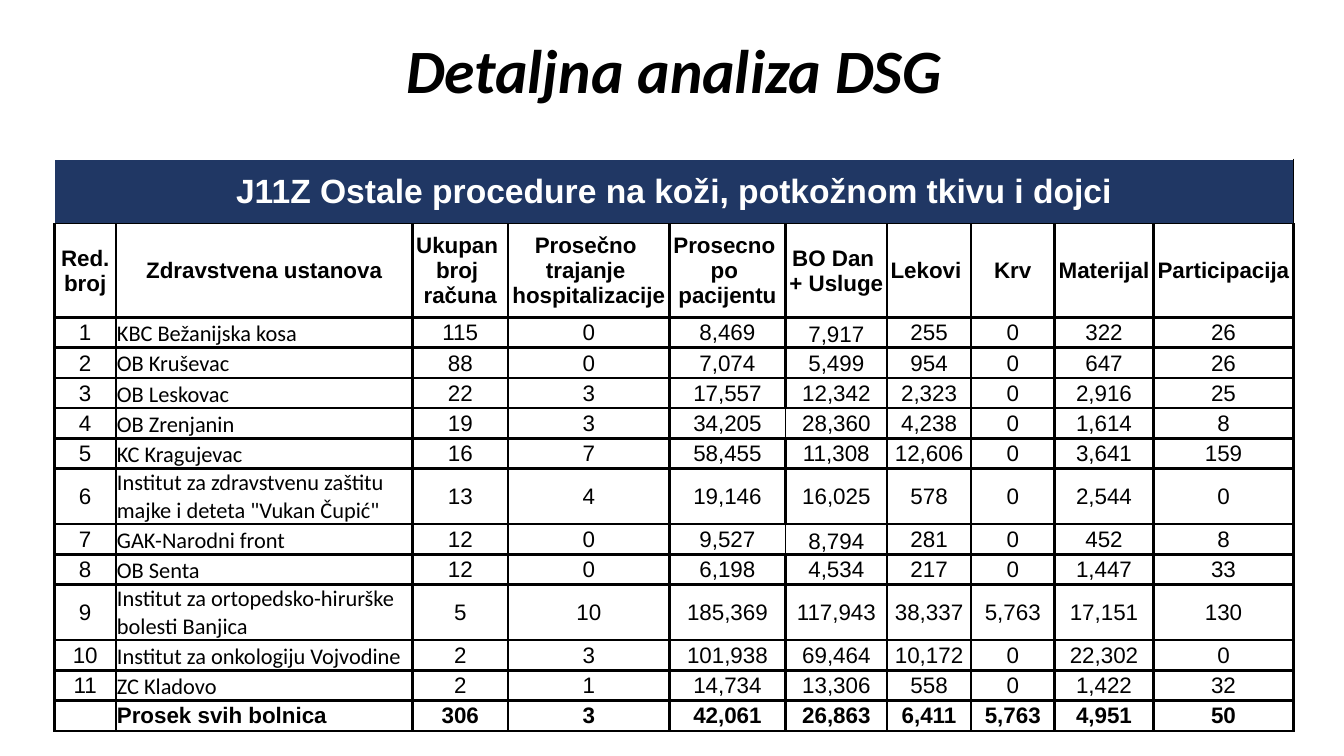
from dataclasses import dataclass

from lxml.etree import SubElement
from pptx import Presentation
from pptx.dml.color import RGBColor
from pptx.enum.text import MSO_ANCHOR, PP_ALIGN
from pptx.oxml.ns import qn
from pptx.util import Emu, Pt

PX = 9144

TITLE = "Detaljna analiza DSG"
GROUP = "J11Z Ostale procedure na koži, potkožnom tkivu i dojci"
HEADERS = (
    "Red. broj", "Zdravstvena ustanova", "Ukupan \nbroj \nračuna",
    "Prosečno \ntrajanje \nhospitalizacije", "Prosecno \npo \npacijentu",
    "BO Dan \n+ Usluge", "Lekovi ", "Krv", "Materijal", "Participacija",
)
HOSPITALS = (
    ("KBC Bežanijska kosa", "115 0 8,469 7,917 255 0 322 26"),
    ("OB Kruševac", "88 0 7,074 5,499 954 0 647 26"),
    ("OB Leskovac", "22 3 17,557 12,342 2,323 0 2,916 25"),
    ("OB Zrenjanin", "19 3 34,205 28,360 4,238 0 1,614 8"),
    ("KC Kragujevac", "16 7 58,455 11,308 12,606 0 3,641 159"),
    ('Institut za zdravstvenu zaštitu majke i deteta "Vukan Čupić"',
     "13 4 19,146 16,025 578 0 2,544 0"),
    ("GAK-Narodni front", "12 0 9,527 8,794 281 0 452 8"),
    ("OB Senta", "12 0 6,198 4,534 217 0 1,447 33"),
    ("Institut za ortopedsko-hirurške bolesti Banjica",
     "5 10 185,369 117,943 38,337 5,763 17,151 130"),
    ("Institut za onkologiju Vojvodine", "2 3 101,938 69,464 10,172 0 22,302 0"),
    ("ZC Kladovo", "2 1 14,734 13,306 558 0 1,422 32"),
)
AVERAGE = ("Prosek svih bolnica", "306 3 42,061 26,863 6,411 5,763 4,951 50")

COLUMNS = (61, 294, 95, 160, 115, 101, 83, 83, 98, 139)
NAME, PATIENT, CARE = 1, 4, 5
LOW_CARE = (1, 7)
THIN_CARE = (4, 7)
TALL = (6, 9)


@dataclass(frozen=True)
class Theme:
    ink: str = "000000"
    paper: str = "FFFFFF"
    navy: str = "203764"
    heading: str = "Calibri"
    body: str = "Arial"
    title_pt: int = 44
    group_pt: int = 24
    cell_pt: int = 16
    thick: float = 2
    thin: float = 0.5


class Deck:
    def __init__(self, theme):
        self.theme = theme
        self.prs = Presentation()
        self.prs.slide_width, self.prs.slide_height = Emu(1333 * PX), Emu(750 * PX)
        self.s = self.prs.slides.add_slide(self.prs.slide_layouts[6])

    def text(self, tf, text, size, font, color, bold=False, italic=False, align=PP_ALIGN.CENTER):
        tf.text = text
        for p in tf.paragraphs:
            p.alignment = align
            for r in p.runs:
                r.font.size, r.font.name = Pt(size), font
                r.font.bold, r.font.italic = bold, italic
                r.font.color.rgb = RGBColor.from_string(color)
            if not p.runs:
                SubElement(p._p, qn("a:endParaRPr"), sz=str(size * 100))

    def title(self, text, x, y, w, h):
        t = self.theme
        tf = self.s.shapes.add_textbox(*(Emu(v * PX) for v in (x, y, w, h))).text_frame
        tf.word_wrap = True
        tf.vertical_anchor = MSO_ANCHOR.MIDDLE
        self.text(tf, text, t.title_pt, t.heading, t.ink, True, True)
        tf.paragraphs[0].line_spacing = 0.9

    def table(self, x, y, columns, rows):
        size = (Emu(v * PX) for v in (x, y, sum(columns), sum(rows)))
        table = self.s.shapes.add_table(len(rows), len(columns), *size).table
        table.first_row = table.horz_banding = False
        for column, width in zip(table.columns, columns):
            column.width = Emu(width * PX)
        for row, height in zip(table.rows, rows):
            row.height = Emu(height * PX)
        return table

    def borders(self, cell, **widths):
        tcPr = cell._tc.get_or_add_tcPr()
        for side in "LRTB":
            if side in widths:
                ln = SubElement(tcPr, qn(f"a:ln{side}"), w=str(Pt(widths[side])))
                fill = SubElement(ln, qn("a:solidFill"))
                SubElement(fill, qn("a:srgbClr"), val=self.theme.ink)

    def cell(self, cell, text, edges, bold=False, font=None, align=PP_ALIGN.CENTER,
             anchor=MSO_ANCHOR.MIDDLE):
        t = self.theme
        self.borders(cell, **edges)
        cell.fill.background()
        self.frame(cell, anchor)
        self.text(cell.text_frame, text, t.cell_pt, font or t.body, t.ink, bold, align=align)

    def frame(self, cell, anchor):
        cell.margin_left = cell.margin_top = cell.margin_right = Emu(PX)
        cell.margin_bottom = 0
        cell.vertical_anchor = anchor

    def banner(self, table, text):
        t = self.theme
        first, last = table.cell(0, 0), table.cell(0, len(table.columns) - 1)
        first.merge(last)
        for cell in (first, last):
            self.borders(cell, R=t.thin, B=t.thin)
            cell.fill.solid()
            cell.fill.fore_color.rgb = RGBColor.from_string(t.navy)
        self.frame(first, MSO_ANCHOR.MIDDLE)
        self.text(first.text_frame, text, t.group_pt, t.body, t.paper, True)


def main():
    theme = Theme()
    deck = Deck(theme)
    deck.title(TITLE, 94, 0, 1150, 145)

    records = [HEADERS]
    records += [(str(i), name, *values.split()) for i, (name, values) in enumerate(HOSPITALS, 1)]
    records.append(("", AVERAGE[0], *AVERAGE[1].split()))
    total = len(records) - 1
    heights = [64, 93] + [55 if i in TALL else 30 for i in range(1, total + 1)]
    table = deck.table(54, 158, COLUMNS, heights)
    deck.banner(table, GROUP)

    for i, record in enumerate(records):
        for c, text in enumerate(record):
            edges = dict.fromkeys("LRTB", theme.thick)
            if i == 0:
                edges["T"] = theme.thin
            if i in THIN_CARE and c in (PATIENT, CARE):
                edges["R" if c == PATIENT else "L"] = theme.thin
            hospital = c == NAME and 0 < i < total
            low = hospital or (c == CARE and i in LOW_CARE)
            deck.cell(
                table.cell(i + 1, c), text, edges,
                bold=i in (0, total),
                font=theme.heading if hospital else theme.body,
                align=PP_ALIGN.LEFT if c == NAME and i else PP_ALIGN.CENTER,
                anchor=MSO_ANCHOR.BOTTOM if low else MSO_ANCHOR.MIDDLE,
            )
    deck.prs.save("out.pptx")


if __name__ == "__main__":
    main()
